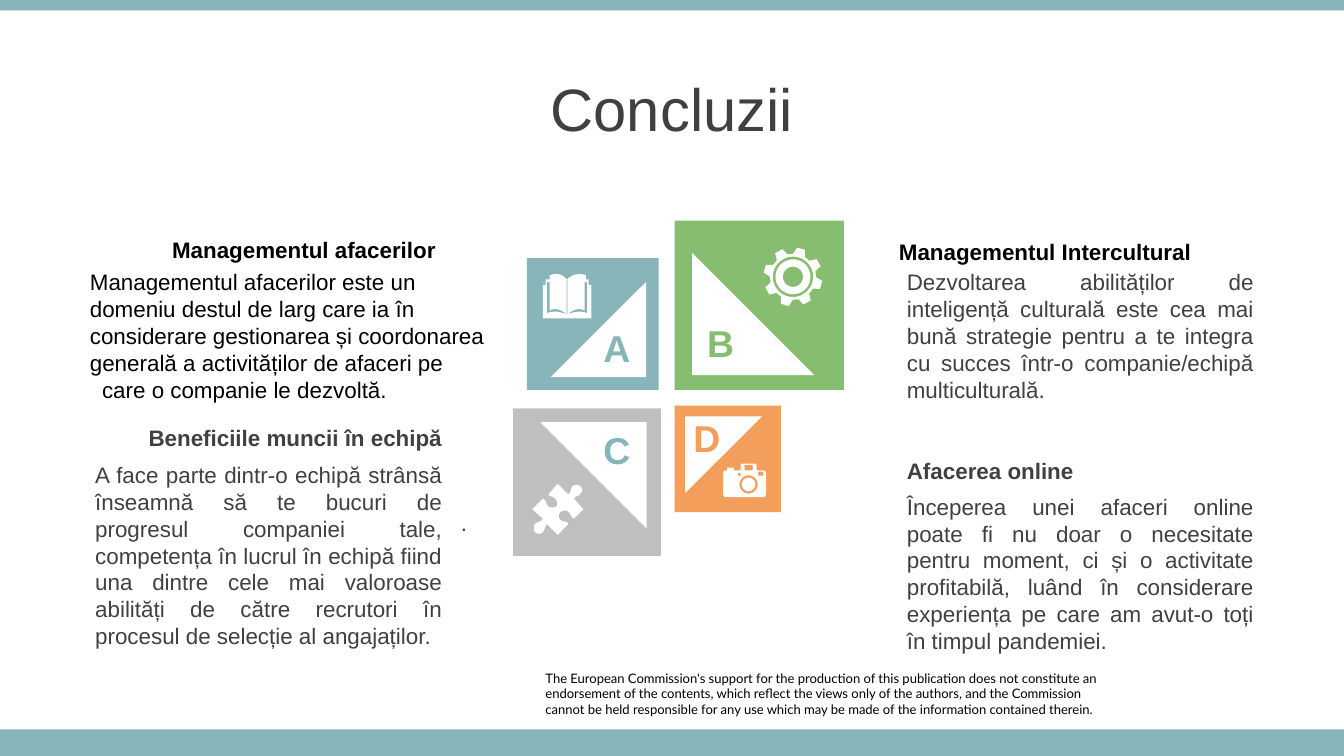
from math import cos, pi, radians, sin

from pptx import Presentation
from pptx.dml.color import RGBColor
from pptx.enum.shapes import MSO_SHAPE
from pptx.enum.text import MSO_ANCHOR, PP_ALIGN
from pptx.util import Cm, Pt

RECTANGLE, TRIANGLE = MSO_SHAPE.RECTANGLE, MSO_SHAPE.RIGHT_TRIANGLE
LEFT, CENTER, RIGHT = PP_ALIGN.LEFT, PP_ALIGN.CENTER, PP_ALIGN.RIGHT
JUSTIFY = PP_ALIGN.JUSTIFY
MIDDLE = MSO_ANCHOR.MIDDLE
COLORS = {"teal": "87B5BA", "green": "86BD70", "orange": "F39E5A",
          "gray": "BFBFBF", "white": "FFFFFF", "dark": "404040",
          "black": "000000"}
ICON_UNIT = 0.0254  # icon outlines are drawn on a fine grid, in cm

# Tile: fill, left, top, side; triangle left, top, side, turn;
# letter, its color, left, top
TILES = [
    ("teal", 9.96, 4.88, 2.49, 10.41, 5.33, 1.8, 270, "A", "teal", 11.1, 6.02),
    ("green", 12.75, 4.17, 3.2, 13.08, 4.78, 2.31, 0, "B", "green", 13.06, 5.92),
    ("orange", 12.75, 7.67, 2.01, 12.95, 7.87, 1.45, 90, "D", "orange", 12.8, 7.72),
    ("gray", 9.7, 7.72, 2.79, 10.21, 7.98, 2.01, 180, "C", "teal", 11.1, 7.95),
]

# Section: heading, its place, alignment, color; body text and its place
SECTIONS = [
    ("Beneficiile muncii în echipă", (1.55, 7.9, 7.06, 0.76), RIGHT, "dark",
     "A face parte dintr-o echipă strânsă înseamnă să te bucuri de progresul "
     "companiei tale, competența în lucrul în echipă fiind una dintre cele mai "
     "valoroase abilități de către recrutori în procesul de selecție al "
     "angajaților.", (1.55, 8.59, 7.06, 3.84)),
    ("Managementul Intercultural", (16.74, 4.37, 7.06, 0.76), LEFT, "black",
     "Dezvoltarea abilităților de inteligență culturală este cea mai bună "
     "strategie pentru a te integra cu succes într-o companie/echipă "
     "multiculturală.", (16.89, 4.95, 7.06, 4.88)),
    ("Afacerea online", (16.89, 8.51, 7.06, 0.76), LEFT, "dark",
     "Începerea unei afaceri online poate fi nu doar o necesitate pentru "
     "moment, ci și o activitate profitabilă, luând în considerare experiența "
     "pe care am avut-o toți în timpul pandemiei.", (16.89, 9.19, 7.06, 5.38)),
]

# Outlines: a pair is a corner, six numbers are a curve
BOOK_COVER = [(422, 208), (419, 205, 417, 204, 414, 204),
              (412, 204, 411, 204, 409, 205), (409, 208), (406, 208),
              (406, 212), (404, 212), (404, 237), (440, 237), (440, 212),
              (438, 212), (438, 208), (436, 208), (436, 205),
              (434, 204, 432, 204, 431, 204), (428, 204, 425, 205, 422, 208)]
PAGE_EDGE = [(422, 234), (417, 230, 413, 229, 409, 231), (409, 210),
             (407, 210), (407, 233), (413, 231, 416, 232, 422, 234)]
PUZZLE = [(432, 362), (433, 363, 434, 366, 432, 367),
          (431, 370, 429, 368, 427, 371), (434, 379), (427, 386),
          (424, 384, 425, 382, 423, 381), (421, 379, 419, 380, 417, 381),
          (416, 382, 415, 385, 417, 387), (420, 389, 421, 387, 423, 390),
          (415, 398), (407, 390), (405, 392, 406, 393, 404, 396),
          (402, 398, 399, 397, 398, 396), (397, 394, 397, 392, 398, 390),
          (400, 388, 402, 389, 404, 386), (396, 379), (404, 371),
          (407, 373, 406, 375, 408, 377), (410, 378, 412, 378, 414, 377),
          (415, 376, 415, 373, 413, 371), (411, 369, 410, 370, 408, 368),
          (415, 360), (423, 368), (426, 365, 424, 364, 426, 362),
          (428, 360, 431, 361, 432, 362)]
CAMERA_BODY = [(552, 345), (562, 345), (563, 346), (563, 350), (567, 350),
               (569, 350, 570, 351, 570, 352), (570, 367),
               (570, 369, 569, 370, 567, 370), (540, 370),
               (539, 370, 538, 369, 538, 367), (538, 352),
               (538, 351, 539, 350, 540, 350), (541, 350), (541, 348),
               (546, 348), (546, 350), (551, 350), (551, 346)]


def color(name):
    return RGBColor.from_string(COLORS[name])


def paint(shape, fill):
    shape.fill.solid()
    shape.fill.fore_color.rgb = color(fill)
    shape.line.fill.background()
    shape.shadow.inherit = False


def add_block(page, kind, place, fill, turn=0):
    shape = page.shapes.add_shape(kind, *map(Cm, place))
    shape.rotation = turn
    paint(shape, fill)


def add_text(page, place, text, size, ink, align=LEFT, bold=False, font="Arial"):
    box = page.shapes.add_textbox(*map(Cm, place))
    frame = box.text_frame
    frame.word_wrap = True
    frame.text = text
    for para in frame.paragraphs:
        para.alignment = align
        for span in para.runs:
            span.font.name = font
            span.font.size = Pt(size)
            span.font.bold = bold
            span.font.color.rgb = color(ink)
    return frame


def trace(outline):
    """Turn corners and curves into a list of points."""
    points = []
    for step in outline:
        if len(step) == 2:
            points.append(step)
            continue
        start = points[-1]
        knots = [start, step[:2], step[2:4], step[4:]]
        for part in range(1, 7):
            t = part / 6
            weights = ((1 - t) ** 3, 3 * t * (1 - t) ** 2, 3 * t * t * (1 - t), t ** 3)
            points.append(tuple(sum(w * knot[axis] for w, knot in zip(weights, knots))
                                for axis in (0, 1)))
    return points


def circle(x, y, radius):
    return [(x + radius * cos(pi * i / 24), y + radius * sin(pi * i / 24))
            for i in range(48)]


def rectangle(left, top, right, bottom):
    return [(left, top), (right, top), (right, bottom), (left, bottom)]


def gear(x, y):
    tooth = [(-15, 17.2), (-8, 22), (8, 22), (15, 17.2)]
    return [(x + radius * cos(radians(angle)), y + radius * sin(radians(angle)))
            for middle in range(-74, 286, 45)
            for angle, radius in ((middle + offset, r) for offset, r in tooth)]


def add_icon(page, outlines):
    """Draw one white shape; inner outlines cut holes."""
    builder = None
    for outline in outlines:
        points = [(Cm(x * ICON_UNIT), Cm(y * ICON_UNIT)) for x, y in trace(outline)]
        if builder is None:
            builder = page.shapes.build_freeform(*points[0])
        else:
            builder.move_to(*points[0])
        builder.add_line_segments(points[1:], close=True)
    paint(builder.convert_to_shape(), "white")


def add_icons(page):
    mirrored = [(844 - x, y) for x, y in trace(PAGE_EDGE)]
    spine = rectangle(421.7, 208, 422.3, 234)
    add_icon(page, [BOOK_COVER, PAGE_EDGE, mirrored, spine])
    add_icon(page, [PUZZLE])
    add_icon(page, [gear(590, 206)] + [circle(590, 206, r) for r in (15, 13, 7.5)])
    add_icon(page, [CAMERA_BODY, circle(557, 360.5, 6.8), circle(557, 360.5, 5),
                    rectangle(549, 352, 551, 354), rectangle(564, 351, 568, 354),
                    rectangle(554, 346, 560, 350)])


def add_business_section(page):
    frame = add_text(page, (1.45, 4.95, 7.98, 5.38),
                     "Managementul afacerilor este un\vdomeniu destul de larg care ia în\v"
                     "considerare gestionarea și coordonarea generală a activităților "
                     "de afaceri pe\ncare o companie le dezvoltă.\n.", 12, "black")
    _, last_line, dot = frame.paragraphs
    last_line._p.get_or_add_pPr().set("marL", str(Cm(0.23)))
    dot._p.get_or_add_pPr().set("marR", str(Cm(0.35)))
    dot.alignment = RIGHT
    dot.space_before = Pt(57)
    dot.runs[0].font.color.rgb = color("dark")
    add_text(page, (1.45, 4.34, 7.04, 0.76), "Managementul afacerilor", 12,
             "black", RIGHT, True)


def main():
    deck = Presentation()
    deck.slide_width, deck.slide_height = Cm(25.4), Cm(14.29)
    page = deck.slides.add_slide(deck.slide_layouts[6])

    # Frame: disclaimer, bars and title
    note = add_text(page, (10.31, 12.67, 10.59, 0.89),
                    "The European Commission's support for the production of this "
                    "publication does not constitute an endorsement of the contents, "
                    "which reflect the views only of the authors, and the Commission\n"
                    "cannot be held responsible for any use which may be made of the "
                    "information contained therein.", 7, "black", font="Lato")
    note.margin_left = note.margin_right = note.margin_top = note.margin_bottom = 0
    add_block(page, RECTANGLE, (0, 13.79, 25.4, 0.5), "teal")
    add_block(page, RECTANGLE, (0, 0, 25.4, 0.2), "teal")
    title = add_text(page, (0, 1.24, 25.4, 1.6), "Concluzii", 32, "dark", CENTER)
    title.vertical_anchor = MIDDLE

    # Lettered tiles with icons
    for fill, left, top, side, tri_left, tri_top, tri_side, turn, *label in TILES:
        add_block(page, RECTANGLE, (left, top, side, side), fill)
        add_block(page, TRIANGLE, (tri_left, tri_top, tri_side, tri_side), "white", turn)
        letter, ink, x, y = label
        add_text(page, (x, y, 1.12, 1.12), letter, 20, ink, CENTER, True)
    add_icons(page)

    # Text sections
    add_business_section(page)
    for heading, heading_place, align, ink, body, body_place in SECTIONS:
        add_text(page, body_place, body, 12, "dark", JUSTIFY)
        add_text(page, heading_place, heading, 12, ink, align, True)

    deck.save("out.pptx")


if __name__ == "__main__":
    main()
